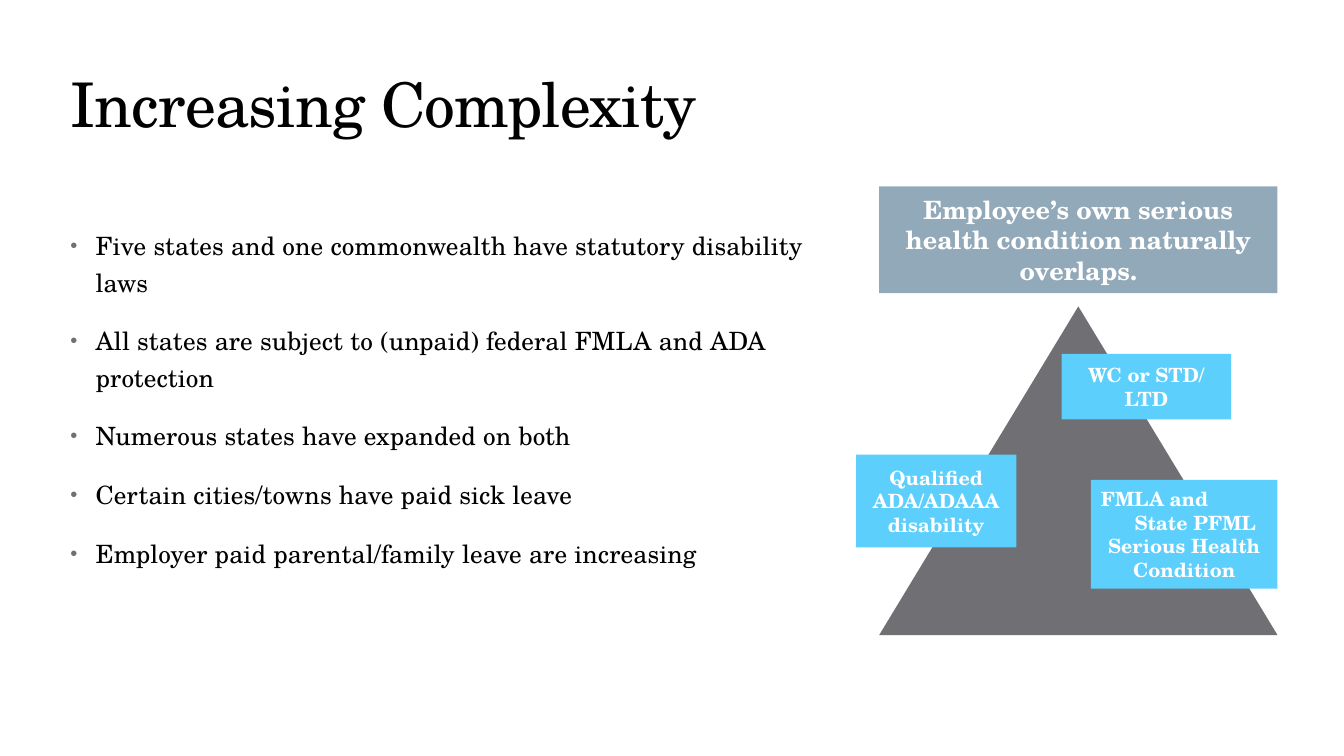
from dataclasses import dataclass

from pptx import Presentation
from pptx.dml.color import RGBColor
from pptx.enum.shapes import MSO_SHAPE as Shape
from pptx.enum.text import MSO_ANCHOR as Anchor, PP_ALIGN as Align
from pptx.oxml.ns import qn
from pptx.util import Inches, Pt
from lxml.etree import SubElement


@dataclass(frozen=True)
class Theme:
    font: str = "TeX Gyre Schola"
    ink: str = "000000"
    white: str = "FFFFFF"
    gray: str = "6F6F74"
    sky: str = "5DCFFD"
    slate: str = "92A9B9"
    title_size: int = 44
    body_size: int = 18
    label_size: int = 14


class SlideBuilder:
    def __init__(self, slide, theme):
        self.slide = slide
        self.theme = theme

    def run(self, paragraph, text, size, color, bold=False, tracking=None):
        run = paragraph.add_run()
        run.text = text
        run.font.name = self.theme.font
        run.font.size = Pt(size)
        run.font.bold = bold
        run.font.color.rgb = RGBColor.from_string(color)
        if tracking is not None:
            run.font._element.set("spc", str(tracking))

    def text_frame(self, box):
        frame = self.slide.shapes.add_textbox(*map(Inches, box)).text_frame
        frame.word_wrap = True
        return frame

    def title(self, text, box):
        frame = self.text_frame(box)
        frame.vertical_anchor = Anchor.BOTTOM
        heading = frame.paragraphs[0]
        heading.line_spacing = 0.9
        self.run(heading, text, self.theme.title_size, self.theme.ink, tracking=-50)

    def bullet(self, paragraph):
        props = paragraph._p.get_or_add_pPr()
        props.set("marL", str(Inches(0.25)))
        props.set("indent", str(-Inches(0.25)))
        color = SubElement(props, qn("a:buClr"))
        SubElement(color, qn("a:srgbClr")).set("val", self.theme.gray)
        SubElement(props, qn("a:buSzPct")).set("val", "80000")
        SubElement(props, qn("a:buFont")).set("typeface", "Arial")
        SubElement(props, qn("a:buChar")).set("char", "•")

    def bullets(self, points, box):
        frame = self.text_frame(box)
        for i, text in enumerate(points):
            point = frame.add_paragraph() if i else frame.paragraphs[0]
            self.bullet(point)
            point.line_spacing = 1.2
            point.space_after = Pt(2)
            if i:
                point.space_before = Pt(14)
            self.run(point, text, self.theme.body_size, self.theme.ink, tracking=10)

    def shape(self, kind, box, fill):
        shape = self.slide.shapes.add_shape(kind, *map(Inches, box))
        shape.shadow.inherit = False
        shape.fill.solid()
        shape.fill.fore_color.rgb = RGBColor.from_string(fill)
        shape.line.fill.background()
        return shape

    def label(self, lines, box, fill, size):
        """Each line is (text, alignment, left indent in inches)."""
        frame = self.shape(Shape.RECTANGLE, box, fill).text_frame
        frame.word_wrap = True
        frame.vertical_anchor = Anchor.MIDDLE
        for i, (text, align, indent) in enumerate(lines):
            line = frame.add_paragraph() if i else frame.paragraphs[0]
            line.alignment = align
            if indent:
                line._p.get_or_add_pPr().set("marL", str(Inches(indent)))
            self.run(line, text, size, self.theme.white, bold=True)


POINTS = [
    "Five states and one commonwealth have statutory disability laws",
    "All states are subject to (unpaid) federal FMLA and ADA protection",
    "Numerous states have expanded on both",
    "Certain cities/towns have paid sick leave",
    "Employer paid parental/family leave are increasing",
]

OVERLAPS = [
    ([("WC or STD/ LTD", Align.CENTER, 0)], (10.53, 3.51, 1.68, 0.65)),
    ([("FMLA and", Align.LEFT, 0),
      ("State PFML", Align.CENTER, 0.22),
      ("Serious Health Condition", Align.CENTER, 0)], (10.82, 4.76, 1.85, 1.08)),
    ([("Qualified ADA/ADAAA disability", Align.CENTER, 0)], (8.49, 4.51, 1.59, 0.92)),
]


def main():
    deck = Presentation()
    deck.slide_width, deck.slide_height = Inches(13.33), Inches(7.5)
    theme = Theme()
    page = SlideBuilder(deck.slides.add_slide(deck.slide_layouts[6]), theme)

    # Title and key points
    page.title("Increasing Complexity", (0.6, 0.25, 12, 1.2))
    page.bullets(POINTS, (0.6, 2.18, 7.89, 3.96))

    # Triangle with a law at each side
    page.shape(Shape.ISOSCELES_TRIANGLE, (8.72, 3.04, 3.95, 3.26), theme.gray)
    for lines, box in OVERLAPS:
        page.label(lines, box, theme.sky, theme.label_size)

    # Banner above the triangle
    banner = "Employee’s own serious health condition naturally overlaps."
    page.label([(banner, Align.CENTER, 0)], (8.72, 1.85, 3.95, 1.06),
               theme.slate, theme.body_size)

    deck.save("out.pptx")


if __name__ == "__main__":
    main()
